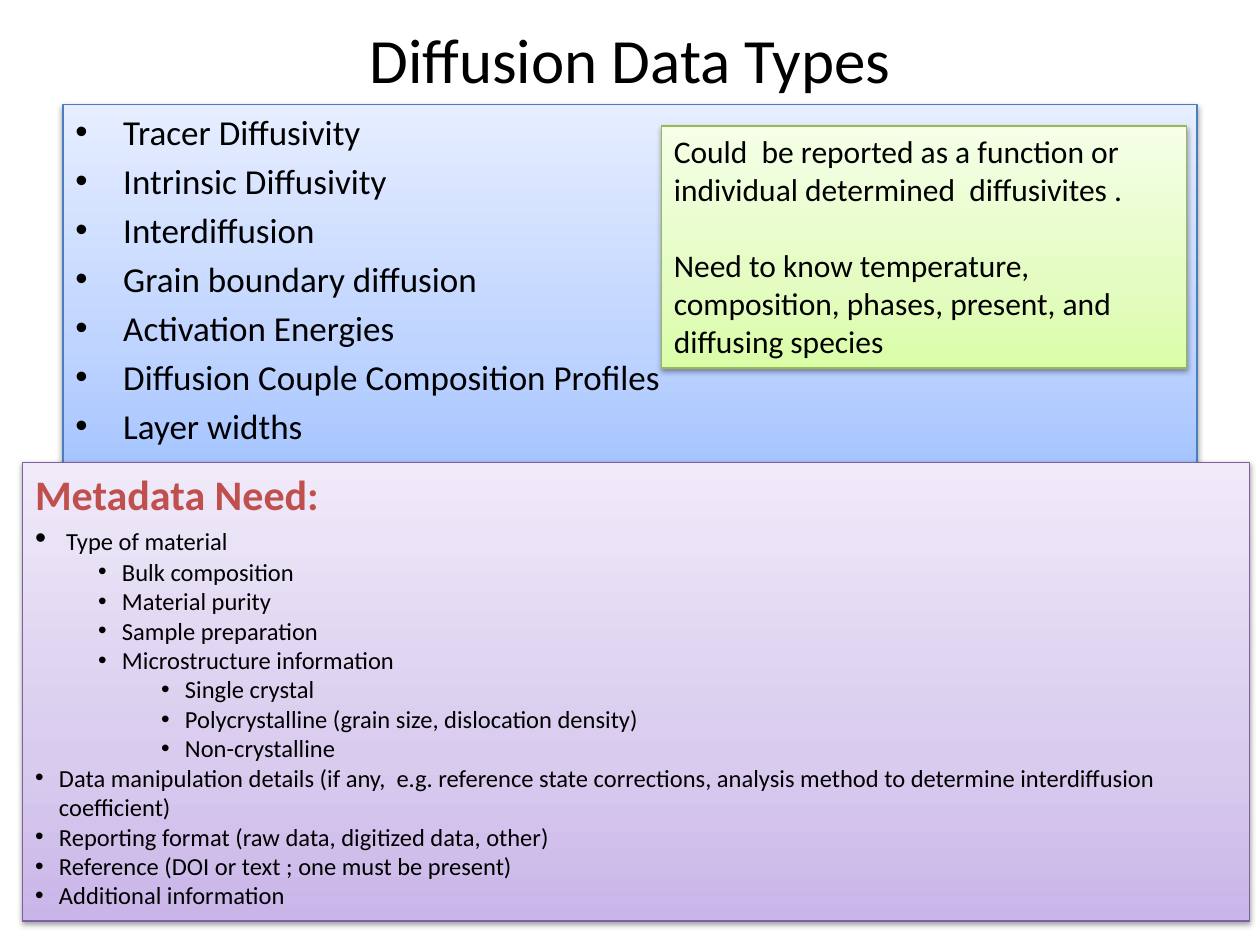
from lxml import etree
from copy import deepcopy
from pptx import Presentation, util as u
from pptx.dml.color import RGBColor
from pptx.enum import shapes, text
from pptx.oxml import ns

BLACK = RGBColor(0x00, 0x00, 0x00)
RED = RGBColor(0xC0, 0x50, 0x4D)
BLUES = [RGBColor(0xA4, 0xC4, 0xFF), RGBColor(0xBF, 0xD4, 0xFF), RGBColor(0xE6, 0xEE, 0xFF)]
GREENS = [RGBColor(0xDA, 0xFD, 0xA7), RGBColor(0xE4, 0xFC, 0xC2), RGBColor(0xF5, 0xFF, 0xE7)]
PURPLES = [RGBColor(0xC9, 0xB5, 0xE8), RGBColor(0xD8, 0xCB, 0xEE), RGBColor(0xF0, 0xEA, 0xF9)]
BLUE_EDGE = RGBColor(0x4B, 0x7E, 0xBC)
GREEN_EDGE = RGBColor(0x98, 0xB9, 0x55)
PURPLE_EDGE = RGBColor(0x7D, 0x60, 0xA0)

prs = Presentation()
prs.slide_width, prs.slide_height = u.Inches(10), u.Inches(7.5)
slide = prs.slides.add_slide(prs.slide_layouts[6])


def add_panel(left, top, width, height, shades, edge):
    """Add a rectangle shaded from dark (bottom) to light (top), with a soft shadow."""
    panel = slide.shapes.add_shape(
        shapes.MSO_SHAPE.RECTANGLE,
        u.Inches(left), u.Inches(top), u.Inches(width), u.Inches(height))
    panel.line.color.rgb = edge
    panel.line.width = u.Pt(0.75)

    panel.fill.gradient()
    panel.fill.gradient_angle = 90
    properties = panel._element.spPr
    stop_list = properties.find(".//" + ns.qn("a:gsLst"))
    stop_list.insert(1, deepcopy(stop_list[0]))
    for stop, position, shade in zip(panel.fill.gradient_stops, (0, 0.35, 1), shades):
        stop.position = position
        stop.color.rgb = shade

    panel.shadow.inherit = False
    effects = properties.find(ns.qn("a:effectLst"))
    shadow = etree.SubElement(effects, ns.qn("a:outerShdw"), blurRad="40000",
                              dist="20000", dir="5400000", rotWithShape="0")
    shadow_color = etree.SubElement(shadow, ns.qn("a:srgbClr"), val="000000")
    etree.SubElement(shadow_color, ns.qn("a:alpha"), val="38000")

    panel.text_frame.word_wrap = True
    panel.text_frame.vertical_anchor = text.MSO_ANCHOR.TOP
    return panel.text_frame


def fill_paragraphs(frame, lines, size, hang=0):
    """Write (level, line) pairs; a level of None gives a line without a bullet."""
    frame.text = "\n".join(line for _, line in lines)
    for paragraph, (level, _) in zip(frame.paragraphs, lines):
        paragraph.alignment = text.PP_ALIGN.LEFT
        for run in paragraph.runs:
            run.font.name = "Calibri"
            run.font.size = u.Pt(size)
            run.font.color.rgb = BLACK
        if level is None:
            continue
        paragraph.level = level
        settings = paragraph._p.get_or_add_pPr()
        settings.set("marL", str(u.Inches(0.5 * level + hang)))
        settings.set("indent", str(u.Inches(-hang)))
        etree.SubElement(settings, ns.qn("a:buFont"), typeface="Arial")
        etree.SubElement(settings, ns.qn("a:buChar"), char="•")


title = slide.shapes.add_textbox(u.Inches(0.5), u.Inches(0), u.Inches(9), u.Inches(0.92)).text_frame
title.word_wrap = True
title.vertical_anchor = text.MSO_ANCHOR.MIDDLE
fill_paragraphs(title, [(None, "Diffusion Data Types")], 36)
title.paragraphs[0].alignment = text.PP_ALIGN.CENTER

data_types = add_panel(0.5, 0.83, 9, 2.92, BLUES, BLUE_EDGE)
fill_paragraphs(data_types, [
    (0, "Tracer Diffusivity"),
    (0, "Intrinsic Diffusivity"),
    (0, "Interdiffusion"),
    (0, "Grain boundary diffusion"),
    (0, "Activation Energies"),
    (0, "Diffusion Couple Composition Profiles"),
    (0, "Layer widths"),
], 20, hang=0.38)
for data_type in data_types.paragraphs:
    data_type.space_before = u.Pt(4)

reporting = add_panel(5.25, 1, 4.17, 1.92, GREENS, GREEN_EDGE)
fill_paragraphs(reporting, [
    (None, "Could  be reported as a function or individual determined  diffusivites ."),
    (None, "Need to know temperature, composition, phases, present, and diffusing species"),
], 18)
reporting.paragraphs[1].space_before = u.Pt(22)

metadata = add_panel(0.18, 3.67, 9.74, 3.64, PURPLES, PURPLE_EDGE)
fill_paragraphs(metadata, [
    (None, "Metadata Need:"),
    (0, " "),
    (1, "Bulk composition"),
    (1, "Material purity"),
    (1, "Sample preparation"),
    (1, "Microstructure information"),
    (2, "Single crystal"),
    (2, "Polycrystalline (grain size, dislocation density)"),
    (2, "Non-crystalline"),
    (0, "Data manipulation details (if any,  e.g. reference state corrections, "
        "analysis method to determine interdiffusion coefficient)"),
    (0, "Reporting format (raw data, digitized data, other)"),
    (0, "Reference (DOI or text ; one must be present)"),
    (0, "Additional information"),
], 14, hang=0.19)

heading = metadata.paragraphs[0].runs[0].font
heading.size = u.Pt(24)
heading.bold = True
heading.color.rgb = RED

# The larger leading space sets the size of this bullet.
material = metadata.paragraphs[1]
material.runs[0].font.size = u.Pt(18)
material_label = material.add_run()
material_label.text = "Type of material"
material_label.font.name = "Calibri"
material_label.font.size = u.Pt(14)
material_label.font.color.rgb = BLACK

prs.save("out.pptx")
